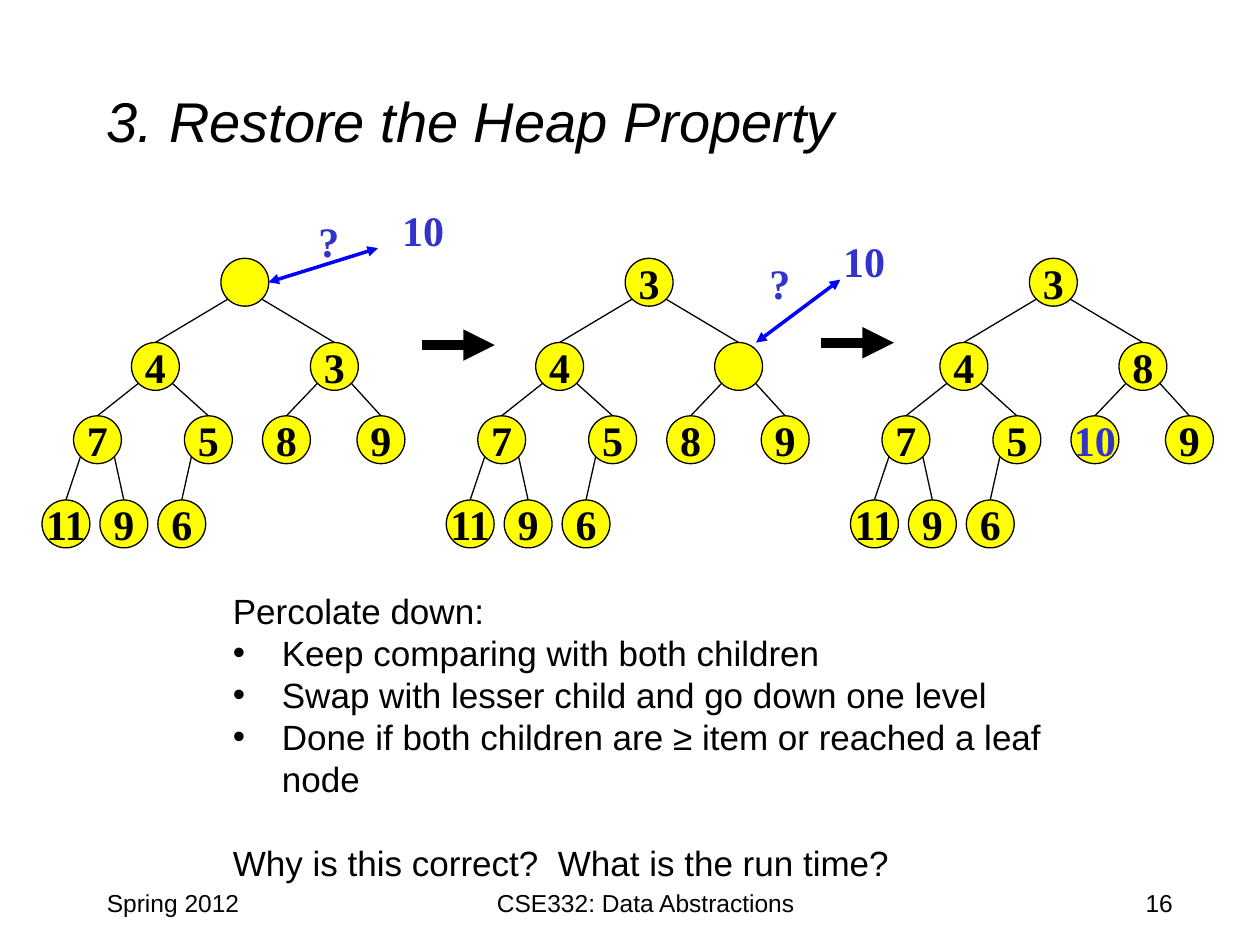
"""Build the heap slide showing how percolate down restores the heap property."""
from dataclasses import dataclass
from math import sqrt

from lxml.etree import SubElement
from pptx import Presentation
from pptx.dml.color import RGBColor
from pptx.enum.shapes import MSO_CONNECTOR, MSO_SHAPE
from pptx.enum.text import MSO_ANCHOR, PP_ALIGN
from pptx.oxml.ns import qn
from pptx.util import Pt

COLORS = {"black": "000000", "node": "FFFF00", "item": "3333CC", "compare": "0000FF"}
SIZE = 27.36
TREE_LEFT, TREE_STEP = 24, 231
NODE_POS = [(102.24, 147.6), (51.12, 195.7), (153.4, 195.7),
            (18, 237.6), (81.4, 237.6), (126, 237.6), (180, 237.6),
            (0, 285.7), (33.1, 285.7), (66.2, 285.7)]
SANS = {"name": "Arial", "size": Pt(20), "bold": False, "italic": False}
SERIF = {"name": "Times New Roman", "size": Pt(24), "bold": True}
BULLET_INDENT = 28


@dataclass
class Label:
    text: str
    x: float
    y: float


@dataclass
class Line:
    x1: float
    y1: float
    x2: float
    y2: float
    color: str = "black"
    width: float = 0.75
    ends: tuple[str, ...] = ()


@dataclass
class Box:
    text: str
    x: float
    y: float
    w: float
    h: float
    size: float = 14
    align: PP_ALIGN = PP_ALIGN.LEFT
    anchor: MSO_ANCHOR = MSO_ANCHOR.TOP
    italic: bool = False


TREES = [["", "4", "3", "7", "5", "8", "9", "11", "9", "6"],
         ["3", "4", "", "7", "5", "8", "9", "11", "9", "6"],
         ["3", "4", "8", "7", "5", "10", "9", "11", "9", "6"]]
LABELS = [Label("10", 228.2, 117.4), Label("10", 480.2, 135.4),
          Label("?", 174.2, 123.8), Label("?", 432, 147.6)]
BOTH = ("a:headEnd", "a:tailEnd")
ARROWS = [Line(241.2, 197.2, 282.8, 197.2, "black", 6, BOTH[1:]),
          Line(469.4, 195.9, 510.8, 195.9, "black", 6, BOTH[1:]),
          Line(216, 141.8, 153.4, 161.3, "compare", 2, BOTH),
          Line(480.2, 159.8, 432, 195.8, "compare", 2, BOTH)]
BOXES = [Box("3. Restore the Heap Property", 54, 23.8, 612, 90, 32,
             anchor=MSO_ANCHOR.MIDDLE, italic=True),
         Box("Spring 2012", 54, 504, 150, 36),
         Box("CSE332: Data Abstractions", 234, 504, 270, 36, align=PP_ALIGN.CENTER),
         Box("16", 612, 504, 100.8, 36, align=PP_ALIGN.CENTER)]
BODY = Box("", 126, 333.4, 520.6, 152.6)
INTRO = "Percolate down:"
STEPS = ["Keep comparing with both children",
         "Swap with lesser child and go down one level",
         "Done if both children are ≥ item or reached a leaf node"]
QUESTION = "Why is this correct?  What is the run time?"


def rgb(name: str) -> RGBColor:
    """Return the named colour."""
    return RGBColor.from_string(COLORS[name])


def set_attrs(obj, values: dict) -> None:
    """Set each attribute in the dict on the object."""
    for key, value in values.items():
        setattr(obj, key, value)


def write(p, text: str, font: dict, color: str = "black") -> None:
    """Add a formatted run to a paragraph."""
    r = p.add_run()
    r.text = text
    set_attrs(r.font, font)
    r.font.color.rgb = rgb(color)


def add_frame(s, box: Box):
    """Add a wrapping text box and return its text frame."""
    tf = s.shapes.add_textbox(Pt(box.x), Pt(box.y), Pt(box.w), Pt(box.h)).text_frame
    set_attrs(tf, {"word_wrap": True, "vertical_anchor": box.anchor})
    return tf


def add_box(s, box: Box) -> None:
    """Draw a one-line text box."""
    p = add_frame(s, box).paragraphs[0]
    p.alignment = box.align
    write(p, box.text, SANS | {"size": Pt(box.size), "italic": box.italic})


def add_circle(s, label: Label, color: str = "black", filled: bool = True):
    """Draw a circle with centred text, as a node or as a bare label."""
    sp = s.shapes.add_shape(MSO_SHAPE.OVAL, Pt(label.x), Pt(label.y), Pt(SIZE), Pt(SIZE))
    sp.shadow.inherit = False
    if filled:
        sp.fill.solid()
        sp.fill.fore_color.rgb = rgb("node")
        sp.line.color.rgb = rgb("black")
        sp.line.width = Pt(0.75)
    else:
        sp.fill.background()
        sp.line.fill.background()
    if label.text:
        tf = sp.text_frame
        set_attrs(tf, {"word_wrap": False, "vertical_anchor": MSO_ANCHOR.MIDDLE,
                       "margin_left": 0, "margin_right": 0,
                       "margin_top": 0, "margin_bottom": 0})
        tf.paragraphs[0].alignment = PP_ALIGN.CENTER
        write(tf.paragraphs[0], label.text, SERIF, color)
    return sp


def add_line(s, line: Line):
    """Draw a straight connector with optional arrowheads."""
    c = s.shapes.add_connector(MSO_CONNECTOR.STRAIGHT, Pt(line.x1), Pt(line.y1),
                               Pt(line.x2), Pt(line.y2))
    c.line.color.rgb = rgb(line.color)
    c.line.width = Pt(line.width)
    for end in line.ends:
        SubElement(c.line._get_or_add_ln(), qn(end), type="triangle")
    SubElement(c._element.spPr, qn("a:effectLst"))
    return c


def add_tree(s, left: float, values: list[str]) -> None:
    """Draw a heap whose nodes are listed in level order."""
    nodes = [add_circle(s, Label(v, left + x, y), "item" if v == "10" else "black")
             for v, (x, y) in zip(values, NODE_POS)]
    half = SIZE / 2
    reach = half / sqrt(2)
    for i in range(1, len(nodes)):
        px, py = NODE_POS[(i - 1) // 2]
        x, y = NODE_POS[i]
        side = reach if i % 2 == 0 else -reach
        edge = add_line(s, Line(left + px + half + side, py + half + reach,
                                left + x + half, y))
        edge.end_connect(nodes[i], 0)


def add_body(s) -> None:
    """Draw the percolate steps and the closing question."""
    tf = add_frame(s, BODY)
    for i, text in enumerate([INTRO, *STEPS, QUESTION]):
        p = tf.paragraphs[0] if i == 0 else tf.add_paragraph()
        p.line_spacing = Pt(24)
        if text in STEPS:
            pPr = p._p.get_or_add_pPr()
            pPr.set("marL", str(Pt(BULLET_INDENT)))
            pPr.set("indent", str(-Pt(BULLET_INDENT)))
            SubElement(pPr, qn("a:buFont"), typeface="Arial")
            SubElement(pPr, qn("a:buChar"), char="•")
        elif text == QUESTION:
            p.space_before = Pt(24)
        write(p, text, SANS)


def main() -> None:
    """Build and save the slide."""
    prs = Presentation()
    set_attrs(prs, {"slide_width": Pt(720), "slide_height": Pt(540)})
    s = prs.slides.add_slide(prs.slide_layouts[6])
    for box in BOXES:
        add_box(s, box)
    add_body(s)
    for i, values in enumerate(TREES):
        add_tree(s, TREE_LEFT + i * TREE_STEP, values)
    for arrow in ARROWS:
        add_line(s, arrow)
    for label in LABELS:
        add_circle(s, label, "item", filled=False)
    prs.save("out.pptx")


if __name__ == "__main__":
    main()
